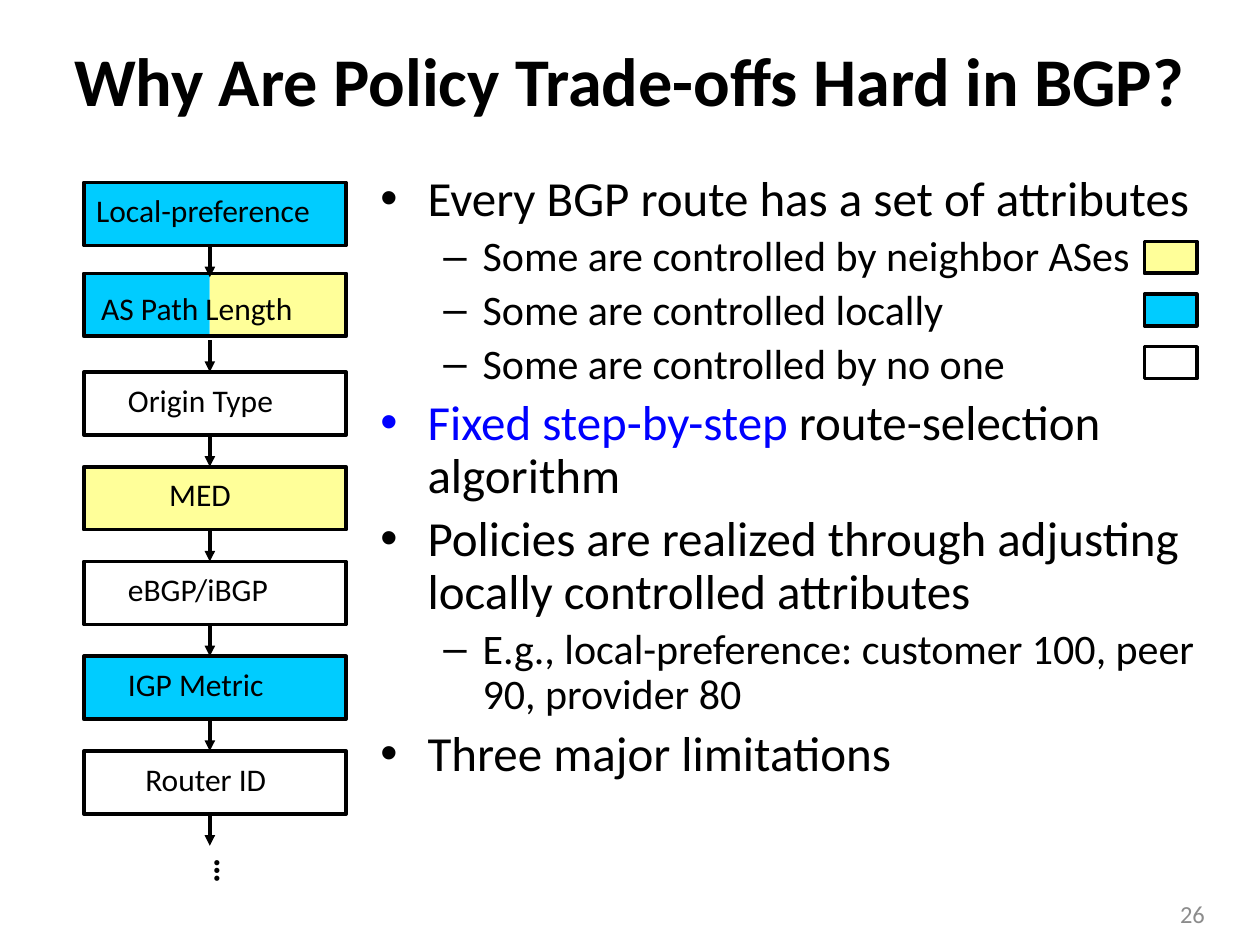
from lxml import etree
from pptx import Presentation
from pptx.dml.color import RGBColor
from pptx.enum.shapes import MSO_CONNECTOR, MSO_SHAPE
from pptx.enum.text import MSO_ANCHOR, MSO_AUTO_SIZE, PP_ALIGN
from pptx.oxml.ns import qn
from pptx.util import Cm, Pt

COLORS = {"text": "000000", "accent": "0000FF", "number": "8C8C8C",
          "local": "00CCFF", "neighbor": "FFFF99"}

# label, fill, label offset x, label width
STEPS = [("Local-preference", "local", 0, 5.29),
         ("AS Path Length", None, 0.1, 4.95),
         ("Origin Type", None, 0.64, 3.78),
         ("MED", "neighbor", 1.47, 1.93),
         ("eBGP/iBGP", None, 0.64, 3.86),
         ("IGP Metric", "local", 0.64, 3.51),
         ("Router ID", None, 0.99, 3.23)]

# level, runs of (text, color)
BULLETS = [(0, [("Every BGP route has a set of attributes", "text")]),
           (1, [("Some are controlled by neighbor ASes", "text")]),
           (1, [("Some are controlled locally", "text")]),
           (1, [("Some are controlled by no one", "text")]),
           (0, [("Fixed step-by-step", "accent"),
                (" route-selection algorithm", "text")]),
           (0, [("Policies are realized through adjusting locally "
                 "controlled attributes", "text")]),
           (1, [("E.g., local-preference: customer 100, peer 90, "
                 "provider 80", "text")]),
           (0, [("Three major limitations", "text")])]

# bullet character, size, left margin, hanging indent
LEVELS = [("•", 28, 0.95, 0.95), ("–", 24, 2.06, 0.79)]


def rgb(name):
    return RGBColor.from_string(COLORS[name])


def format_run(r, size, color="text", bold=False):
    r.font.name = "Calibri"
    r.font.size = Pt(size)
    r.font.bold = bold
    r.font.color.rgb = rgb(color)


def add_label(s, x, y, w, h, text, size, color="text", bold=False):
    tb = s.shapes.add_textbox(Cm(x), Cm(y), Cm(w), Cm(h))
    tf = tb.text_frame
    tf.word_wrap = True
    tf.text = text
    format_run(tf.paragraphs[0].runs[0], size, color, bold)
    return tf


def add_box(s, x, y, w, h, fill=None, outlined=True):
    sp = s.shapes.add_shape(MSO_SHAPE.RECTANGLE, Cm(x), Cm(y), Cm(w), Cm(h))
    sp.shadow.inherit = False
    if fill:
        sp.fill.solid()
        sp.fill.fore_color.rgb = rgb(fill)
    else:
        sp.fill.background()
    if outlined:
        sp.line.color.rgb = rgb("text")
        sp.line.width = Pt(2)
    else:
        sp.line.fill.background()


def add_down_arrow(s, x, y, length):
    c = s.shapes.add_connector(MSO_CONNECTOR.STRAIGHT,
                               Cm(x), Cm(y), Cm(x), Cm(y + length))
    c.line.color.rgb = rgb("text")
    c.line.width = Pt(2)
    etree.SubElement(c.line._get_or_add_ln(), qn("a:tailEnd"), type="triangle")
    etree.SubElement(c._element.spPr, qn("a:effectLst"))


def add_title(s, x, y, w, h):
    title = s.shapes.title
    title.left, title.top, title.width, title.height = Cm(x), Cm(y), Cm(w), Cm(h)
    tf = title.text_frame
    tf.text = "Why Are Policy Trade-offs Hard in BGP?"
    tf.auto_size = MSO_AUTO_SIZE.NONE
    tf.vertical_anchor = MSO_ANCHOR.MIDDLE
    p = tf.paragraphs[0]
    p.alignment = PP_ALIGN.CENTER
    format_run(p.runs[0], 39, bold=True)


def add_selection_flow(s, x, y, w, h, gap):
    """Stack the route-selection steps with an arrow below each one."""
    pitch, mid = h + gap, 2.54
    for i, (text, fill, dx, label_w) in enumerate(STEPS):
        top, dy = y + i * pitch, 0.05
        if text == "AS Path Length":  # shared by both kinds, set slightly higher
            top, dy = top - 0.08, 0.2
            add_box(s, x, top, mid, h, "local", outlined=False)
            add_box(s, x + mid, top, w - mid, h, "neighbor", outlined=False)
        add_box(s, x, top, w, h, fill)
        add_label(s, x + dx, top + dy, label_w, 1.02, text, 18)
    for i in range(len(STEPS)):
        add_down_arrow(s, x + mid, y + i * pitch + h, gap)
    tf = add_label(s, x + 2.12, y + len(STEPS) * pitch, 1.35, 0.97,
                   "…", 20, bold=True)
    tf.word_wrap = False
    tf._txBody.bodyPr.set("vert", "eaVert")


def add_bullets(s, x, y, w, h):
    tf = s.shapes.add_textbox(Cm(x), Cm(y), Cm(w), Cm(h)).text_frame
    tf.word_wrap = True
    for i, (level, runs) in enumerate(BULLETS):
        char, size, margin, hang = LEVELS[level]
        p = tf.add_paragraph() if i else tf.paragraphs[0]
        p.level = level
        p.line_spacing = 0.9
        pPr = p._p.get_or_add_pPr()
        pPr.set("marL", str(Cm(margin)))
        pPr.set("indent", str(-Cm(hang)))
        before = etree.SubElement(pPr, qn("a:spcBef"))
        etree.SubElement(before, qn("a:spcPct"), val="20000")
        etree.SubElement(pPr, qn("a:buFont"), typeface="Arial")
        etree.SubElement(pPr, qn("a:buChar"), char=char)
        for text, color in runs:
            r = p.add_run()
            r.text = text
            format_run(r, size, color)


def add_legend(s, x, y, w, h, pitch):
    for i, fill in enumerate(["neighbor", "local", None]):
        add_box(s, x, y + i * pitch, w, h, fill)


def add_slide_number(s, x, y, w, h):
    tf = add_label(s, x, y, w, h, "26", 14, "number")
    tf.vertical_anchor = MSO_ANCHOR.MIDDLE
    tf.paragraphs[0].alignment = PP_ALIGN.RIGHT


def main():
    prs = Presentation()
    prs.slide_width, prs.slide_height = Cm(25.4), Cm(19.05)
    s = prs.slides.add_slide(prs.slide_layouts[5])
    add_title(s, 0.2, 0, 24.97, 3.18)
    add_bullets(s, 7.42, 3.39, 17.14, 13.55)
    add_selection_flow(s, 1.69, 3.68, 5.29, 1.27, 0.64)
    add_legend(s, 23.07, 4.87, 1.06, 0.64, 1.06)
    add_slide_number(s, 18.62, 17.78, 5.92, 1.27)
    prs.save("out.pptx")


if __name__ == "__main__":
    main()
